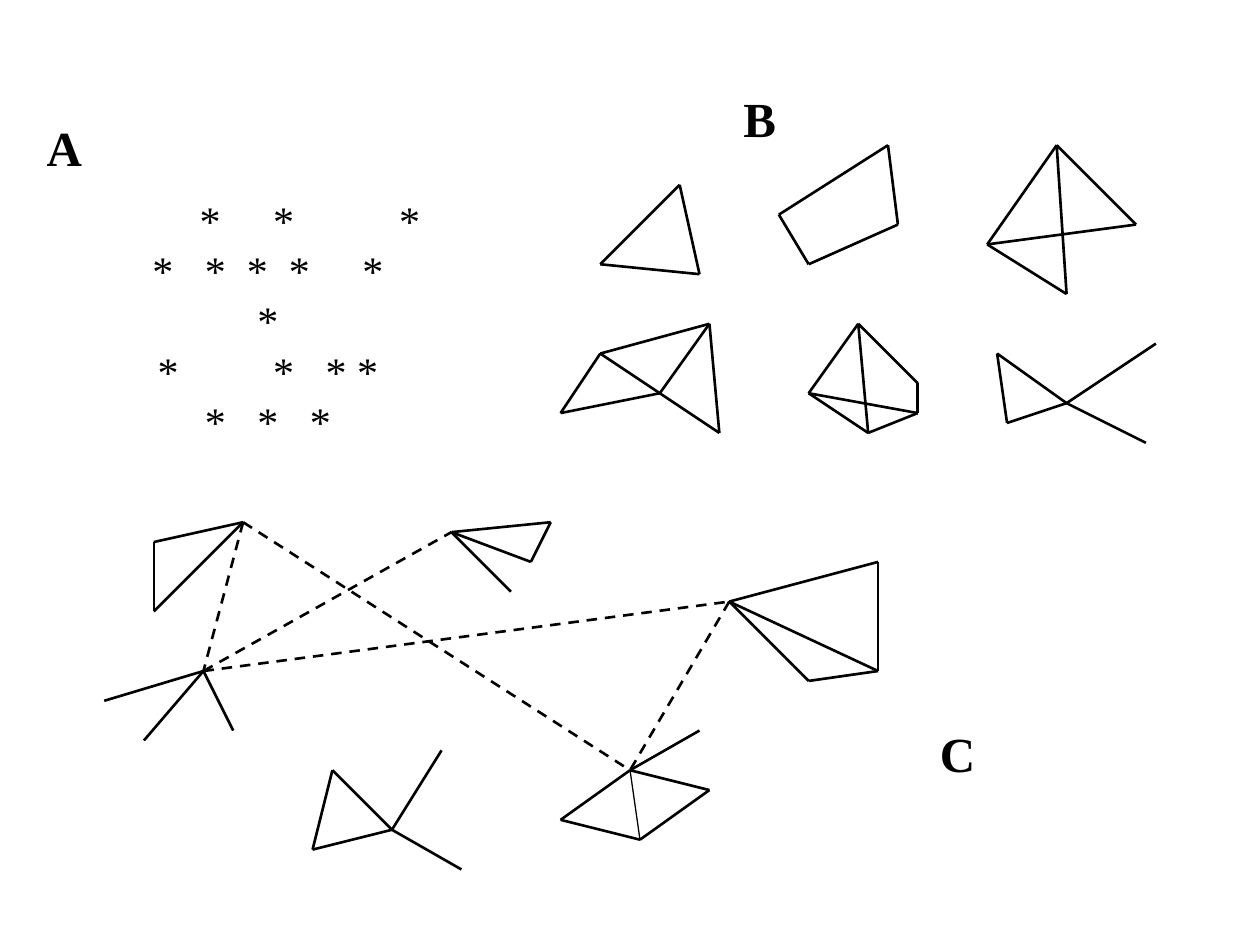
from dataclasses import dataclass

from lxml import etree
from pptx import Presentation, util as u
from pptx.dml.color import RGBColor
from pptx.enum import dml, shapes, text
from pptx.oxml import ns

COLORS = {"ink": "000000"}
FONT = "Times New Roman"
STEP = u.Mm(2)
ORIGIN_X, ORIGIN_Y = u.Inches(0.04), u.Inches(0.05)
STAR_STEP = u.Pt(3)
STAR_ROWS = [(9, 23, 47), (0, 10, 18, 26, 40), (20,), (1, 23, 33, 39), (10, 20, 30)]


@dataclass(frozen=True)
class Figure:
    """Named nodes as (column, row) on the 2 mm grid, and edges as pairs of names."""
    nodes: dict[str, tuple[int, int]]
    edges: str
    thin: str = ""


@dataclass(frozen=True)
class Label:
    letter: str
    box: tuple[float, float, float, float]
    top_margin: float = 0.05


LABELS = [
    Label("A", (0.27, 0.41, 0.48, 1.97), 0.52),
    Label("B", (5.8, 0.65, 0.46, 0.57)),
    Label("C", (7.36, 5.69, 0.48, 0.57)),
]

SHAPE_FIGURES = [
    Figure({"a": (60, 26), "b": (68, 18), "c": (70, 27)}, "ab bc ac"),
    Figure({"a": (78, 21), "b": (89, 14), "c": (90, 22), "d": (81, 26)}, "ab bc ad dc"),
    Figure({"a": (99, 24), "b": (106, 14), "c": (114, 22), "d": (107, 29)},
           "ab bc ac ad bd"),
    Figure({"a": (60, 35), "b": (56, 41), "c": (66, 39), "d": (71, 32), "e": (72, 43)},
           "ab ac bc cd ce de ad"),
    Figure({"a": (86, 32), "b": (81, 39), "c": (87, 43), "d": (92, 38), "e": (92, 41)},
           "ab bc ad be ce de ac"),
    Figure({"a": (107, 40), "b": (100, 35), "c": (116, 34), "d": (101, 42),
            "e": (115, 44)}, "ab ac ad ae bd"),
]

NETWORK_FIGURES = [
    Figure({"a": (15, 54), "b": (15, 61), "c": (24, 52)}, "ab ac bc"),
    Figure({"a": (45, 53), "b": (51, 59), "c": (55, 52), "d": (53, 56)}, "ab ac ad cd"),
    Figure({"a": (10, 70), "b": (20, 67), "c": (14, 74), "d": (23, 73)}, "ab bc bd"),
    Figure({"a": (33, 77), "b": (39, 83), "c": (44, 75), "d": (31, 85), "e": (46, 87)},
           "ab bc db be ad"),
    Figure({"a": (63, 77), "b": (56, 82), "c": (64, 84), "d": (71, 79), "e": (70, 73)},
           "ab bc ad cd ae", thin="ac"),
    Figure({"a": (73, 60), "b": (88, 56), "c": (81, 68), "d": (88, 67)},
           "ab ac bd cd ad"),
]

HUB_LINKS = Figure(
    {"n": (24, 52), "w": (20, 67), "s": (63, 77), "m": (45, 53), "e": (73, 60)},
    "nw ns wm we es")


def add_edge(slide, start: tuple[int, int], end: tuple[int, int],
             width: float = 1.5, dashed: bool = False) -> None:
    points = [origin + STEP * cell for point in (start, end)
              for origin, cell in zip((ORIGIN_X, ORIGIN_Y), point)]
    connector = slide.shapes.add_connector(shapes.MSO_CONNECTOR.STRAIGHT, *points)
    connector.line.color.rgb = RGBColor.from_string(COLORS["ink"])
    connector.line.width = u.Pt(width)
    if dashed:
        connector.line.dash_style = dml.MSO_LINE.DASH
    etree.SubElement(connector._element.spPr, ns.qn("a:effectLst"))


def add_figure(slide, figure: Figure, dashed: bool = False) -> None:
    for edges, width in ((figure.edges, 1.5), (figure.thin, 0.75)):
        for start, end in edges.split():
            add_edge(slide, figure.nodes[start], figure.nodes[end], width, dashed)


def add_text_frame(slide, box: tuple[float, float, float, float], **margins: float):
    shape = slide.shapes.add_textbox(*map(u.Inches, box))
    frame = shape.text_frame
    frame.word_wrap = False
    frame.vertical_anchor = text.MSO_ANCHOR.TOP
    for side, inches in margins.items():
        setattr(frame, f"margin_{side}", u.Inches(inches))
    return frame


def format_paragraph(paragraph, alignment, **font_values) -> None:
    paragraph.alignment = alignment
    for name, value in {"name": FONT, **font_values}.items():
        setattr(paragraph.font, name, value)
        for run in paragraph.runs:
            setattr(run.font, name, value)
    for run in paragraph.runs:
        run.font.color.rgb = RGBColor.from_string(COLORS["ink"])


def add_label(slide, label: Label) -> None:
    frame = add_text_frame(slide, label.box, top=label.top_margin)
    paragraph = frame.paragraphs[0]
    paragraph.add_run().text = label.letter
    format_paragraph(paragraph, text.PP_ALIGN.CENTER, size=u.Pt(28), bold=True)


def add_stars(slide) -> None:
    """Place each row of stars on tab stops counted in STAR_STEP."""
    frame = add_text_frame(slide, (0.83, 1.07, 2.62, 3.69),
                           left=0.38, top=0.47, right=0)
    frame.word_wrap = True
    for index, stops in enumerate(STAR_ROWS):
        paragraph = frame.add_paragraph() if index else frame.paragraphs[0]
        paragraph.add_run().text = "".join("\t*" if stop else "*" for stop in stops)
        format_paragraph(paragraph, text.PP_ALIGN.LEFT, size=u.Pt(24))
        paragraph.line_spacing = u.Pt(28.8)
        properties = paragraph._p.get_or_add_pPr()
        tab_list = etree.Element(ns.qn("a:tabLst"))
        for stop in filter(None, stops):
            etree.SubElement(tab_list, ns.qn("a:tab"), pos=str(stop * STAR_STEP), algn="l")
        properties.find(ns.qn("a:lnSpc")).addnext(tab_list)


def main() -> None:
    presentation = Presentation()
    presentation.slide_width, presentation.slide_height = u.Inches(10), u.Inches(7.5)
    slide = presentation.slides.add_slide(presentation.slide_layouts[6])
    add_stars(slide)
    for figure in SHAPE_FIGURES + NETWORK_FIGURES:
        add_figure(slide, figure)
    add_figure(slide, HUB_LINKS, dashed=True)
    for label in LABELS:
        add_label(slide, label)
    presentation.save("out.pptx")


if __name__ == "__main__":
    main()
